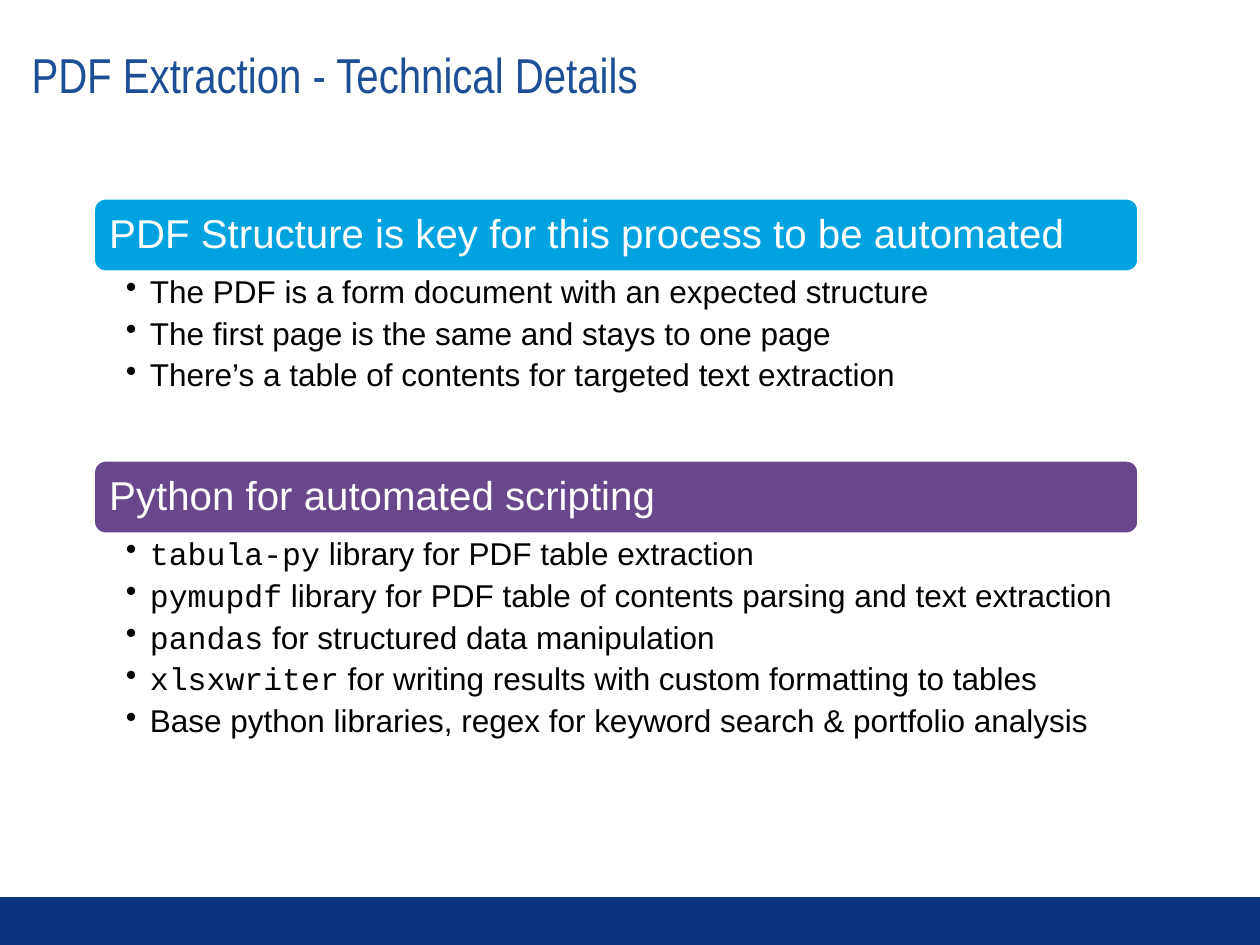
"""Builds a slide on the technical details of PDF extraction."""
from lxml.etree import SubElement
from pptx import Presentation
from pptx.dml.color import RGBColor
from pptx.enum.shapes import MSO_SHAPE
from pptx.enum.text import MSO_ANCHOR, MSO_AUTO_SIZE, PP_ALIGN
from pptx.oxml.ns import qn
from pptx.util import Inches, Pt

COLORS = {
    "title": "1E4E96",
    "footer": "0A357E",
    "structure": "00A3E0",
    "python": "68478D",
    "white": "FFFFFF",
    "black": "000000",
}
SECTIONS = [
    ("PDF Structure is key for this process to be automated", "structure", 1.57, 1.48, [
        ("", "The PDF is a form document with an expected structure"),
        ("", "The first page is the same and stays to one page"),
        ("", "There’s a table of contents for targeted text extraction"),
    ]),
    ("Python for automated scripting", "python", 3.65, 2.03, [
        ("tabula-py", " library for PDF table extraction"),
        ("pymupdf", " library for PDF table of contents parsing and text extraction"),
        ("pandas", " for structured data manipulation"),
        ("xlsxwriter", " for writing results with custom formatting to tables"),
        ("", "Base python libraries, regex for keyword search & portfolio analysis"),
    ]),
]
LEFT, WIDTH, HEADING_HEIGHT = 0.74, 8.3, 0.59


def format_run(run, font_name, size, color):
    run.font.name = font_name
    run.font.size = Pt(size)
    run.font.color.rgb = RGBColor.from_string(COLORS[color])


def set_frame(text_frame, left, top, right, bottom, anchor):
    text_frame.word_wrap = True
    text_frame.auto_size = MSO_AUTO_SIZE.NONE
    text_frame.vertical_anchor = anchor
    text_frame.margin_left, text_frame.margin_top = Inches(left), Inches(top)
    text_frame.margin_right, text_frame.margin_bottom = Inches(right), Inches(bottom)


presentation = Presentation()
presentation.slide_width, presentation.slide_height = Inches(10), Inches(7.5)
slide = presentation.slides.add_slide(presentation.slide_layouts[5])

footer = slide.shapes.add_shape(
    MSO_SHAPE.RECTANGLE, Inches(0), Inches(7.12), Inches(10), Inches(0.38))
footer.shadow.inherit = False
footer.fill.solid()
footer.fill.fore_color.rgb = RGBColor.from_string(COLORS["footer"])
footer.line.fill.background()

title = slide.shapes.title
title.left, title.top = Inches(0.15), Inches(0.2)
title.width, title.height = Inches(9.67), Inches(0.83)
title.text_frame.text = "PDF Extraction - Technical Details"
set_frame(title.text_frame, 0.1, 0.1, 0.2, 0.1, MSO_ANCHOR.MIDDLE)
paragraph = title.text_frame.paragraphs[0]
paragraph.alignment = PP_ALIGN.LEFT
paragraph.line_spacing = 0.9
format_run(paragraph.runs[0], "Arial Narrow", 28, "title")

for heading_text, color, top, body_height, bullets in SECTIONS:
    heading = slide.shapes.add_shape(
        MSO_SHAPE.ROUNDED_RECTANGLE, Inches(LEFT), Inches(top),
        Inches(WIDTH), Inches(HEADING_HEIGHT))
    heading.shadow.inherit = False
    heading.fill.solid()
    heading.fill.fore_color.rgb = RGBColor.from_string(COLORS[color])
    heading.line.color.rgb = RGBColor.from_string(COLORS["white"])
    heading.line.width = Pt(2)
    heading.text_frame.text = heading_text
    set_frame(heading.text_frame, 0.1, 0.1, 0.1, 0.1, MSO_ANCHOR.MIDDLE)
    paragraph = heading.text_frame.paragraphs[0]
    paragraph.alignment = PP_ALIGN.LEFT
    paragraph.line_spacing = 0.9
    format_run(paragraph.runs[0], "Arial", 23, "white")

    body = slide.shapes.add_textbox(
        Inches(LEFT), Inches(top + HEADING_HEIGHT), Inches(WIDTH), Inches(body_height))
    set_frame(body.text_frame, 0.26, 0.03, 0.18, 0.03, MSO_ANCHOR.TOP)
    body.text_frame.text = "\n".join(library + detail for library, detail in bullets)
    for paragraph, (library, detail) in zip(body.text_frame.paragraphs, bullets):
        paragraph.line_spacing = 0.9
        paragraph.space_after = Pt(4.5)
        properties = paragraph._p.get_or_add_pPr()
        properties.set("marL", str(Inches(0.19)))
        properties.set("indent", str(Inches(-0.19)))
        SubElement(properties, qn("a:buChar")).set("char", "•")
        detail_run = paragraph.runs[0]
        if library:
            detail_run.text = library
            format_run(detail_run, "Courier New", 18, "black")
            detail_run = paragraph.add_run()
            detail_run.text = detail
        format_run(detail_run, "Arial", 18, "black")

presentation.save("out.pptx")
